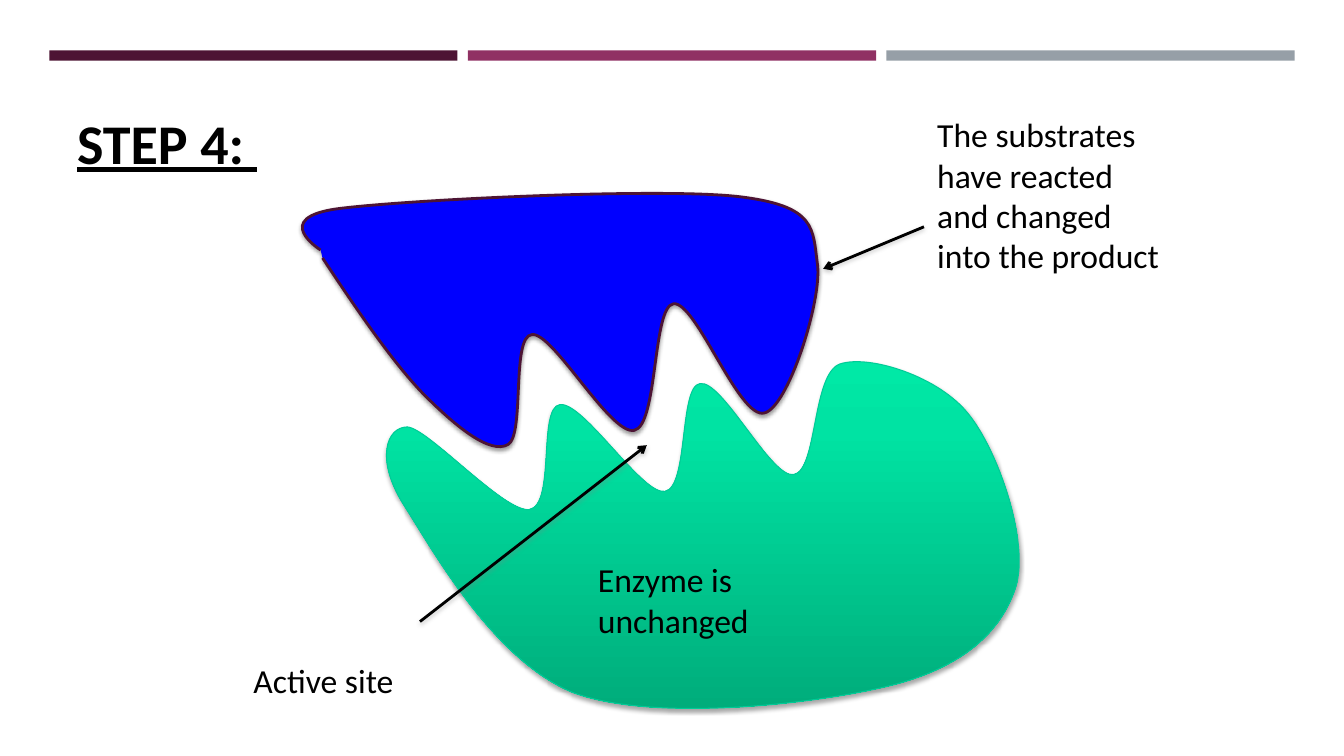
from copy import deepcopy

from lxml.etree import SubElement
from pptx import Presentation
from pptx.dml.color import RGBColor
from pptx.enum.shapes import MSO_CONNECTOR, MSO_SHAPE
from pptx.enum.text import MSO_ANCHOR
from pptx.oxml import parse_xml
from pptx.oxml.ns import nsdecls, qn
from pptx.util import Pt

FONT = "Calibri"

ENZYME_FRAME = (276, 258, 451.4, 247.7)
ENZYME_START = (291, 305)
ENZYME_CURVES = [
    ((276, 305), (268, 328), (288, 360)),
    ((308, 391), (352, 472), (410, 495)),
    ((468, 516), (582, 503), (635, 490)),
    ((688, 477), (716, 451), (726, 418)),
    ((735, 386), (713, 322), (692, 296)),
    ((671, 269), (621, 253), (600, 260)),
    ((580, 267), (584, 336), (567, 339)),
    ((551, 342), (516, 271), (500, 274)),
    ((485, 276), (492, 348), (475, 351)),
    ((459, 354), (417, 287), (400, 289)),
    ((384, 291), (397, 361), (378, 364)),
    ((360, 366), (306, 306), (291, 305)),
]
PRODUCT_FRAME = (216, 138.2, 367.9, 180.7)
PRODUCT_START = (230.4, 184.3)
PRODUCT_CURVES = [
    ((255.6, 222.5), (281.5, 260), (303, 282)),
    ((325, 304), (350, 325), (363, 317.5)),
    ((375, 310), (365, 240), (380, 239)),
    ((395, 237), (436, 311), (453, 307.4)),
    ((470, 304), (466, 219), (481, 217)),
    ((497, 214.6), (528, 300), (546, 295)),
    ((563, 291), (587, 215), (584, 189.4)),
    ((580.3, 163.4), (584, 147), (527, 140.4)),
    ((470, 134), (292.3, 142.6), (242, 149)),
    ((192.2, 155.5), (229, 178.6), (229, 178.6)),
]


def color(value):
    return RGBColor.from_string(value)


def add_shadow(shape, shade, opacity, distance):
    shape._element.spPr.append(parse_xml(
        f'<a:effectLst {nsdecls("a")}>'
        f'<a:outerShdw blurRad="{Pt(3.1)}" dist="{Pt(distance)}" dir="5400000" rotWithShape="0">'
        f'<a:srgbClr val="{shade}"><a:alpha val="{opacity * 1000}"/></a:srgbClr>'
        '</a:outerShdw></a:effectLst>'
    ))


def add_bar(page, left, fill):
    bar = page.shapes.add_shape(MSO_SHAPE.RECTANGLE, Pt(left), Pt(36), Pt(291.6), Pt(7.4))
    bar.shadow.inherit = False
    bar.fill.solid()
    bar.fill.fore_color.rgb = color(fill)
    bar.line.fill.background()


def add_text(page, text, left, top, width, height, size=24, heading=False):
    box = page.shapes.add_textbox(Pt(left), Pt(top), Pt(width), Pt(height))
    frame = box.text_frame
    frame.word_wrap = True
    frame.vertical_anchor = MSO_ANCHOR.BOTTOM if heading else MSO_ANCHOR.TOP
    span = frame.paragraphs[0].add_run()
    span.text = text
    span.font.name = FONT
    span.font.size = Pt(size)
    span.font.color.rgb = color("000000")
    if heading:
        span.font.bold = True
        span.font.underline = True


def add_segment(outline, tag, points, left, top):
    segment = SubElement(outline, qn(tag))
    for x, y in points:
        SubElement(segment, qn("a:pt"), x=str(Pt(x - left)), y=str(Pt(y - top)))


def add_blob(page, frame, start, curves, closed, line, line_width):
    left, top, width, height = frame
    builder = page.shapes.build_freeform(Pt(start[0]), Pt(start[1]))
    builder.add_line_segments([tuple(map(Pt, curve[-1])) for curve in curves], close=closed)
    blob = builder.convert_to_shape()
    blob.left, blob.top, blob.width, blob.height = map(Pt, frame)

    outline = blob._element.spPr.find(".//" + qn("a:path"))
    for segment in list(outline):
        outline.remove(segment)
    outline.set("w", str(Pt(width)))
    outline.set("h", str(Pt(height)))
    add_segment(outline, "a:moveTo", [start], left, top)
    for curve in curves:
        add_segment(outline, "a:cubicBezTo", curve, left, top)
    if closed:
        SubElement(outline, qn("a:close"))

    blob.line.color.rgb = color(line)
    blob.line.width = Pt(line_width)
    return blob


def fill_gradient(shape, stops):
    shape.fill.gradient()
    shape.fill.gradient_angle = 270
    stop_list = shape._element.spPr.find(".//" + qn("a:gsLst"))
    while len(stop_list) < len(stops):
        stop_list.append(deepcopy(stop_list[-1]))
    for stop, (position, value) in zip(shape.fill.gradient_stops, stops):
        stop.position = position
        stop.color.rgb = color(value)


def add_arrow(page, start, end):
    arrow = page.shapes.add_connector(MSO_CONNECTOR.STRAIGHT, *map(Pt, start + end))
    arrow.line.color.rgb = color("000000")
    arrow.line.width = Pt(2)
    stroke = arrow._element.spPr.find(qn("a:ln"))
    stroke.append(parse_xml(f'<a:tailEnd {nsdecls("a")} type="arrow"/>'))
    add_shadow(arrow, "808080", 38, 1.6)


def main():
    deck = Presentation()
    deck.slide_width, deck.slide_height = Pt(960), Pt(540)
    page = deck.slides.add_slide(deck.slide_layouts[6])

    for index, fill in enumerate(("4D1434", "903163", "969FA7")):
        add_bar(page, 35.2 + index * 299, fill)
    add_text(page, "STEP 4: ", 48, 62.6, 612, 66.2, size=40, heading=True)

    enzyme = add_blob(page, ENZYME_FRAME, ENZYME_START, ENZYME_CURVES, True, "00CC98", 0.75)
    fill_gradient(enzyme, ((0, "00E9A6"), (0.2, "00E3A3"), (1, "00AD7B")))
    add_shadow(enzyme, "000000", 35, 1.8)

    add_arrow(page, (660, 162), (588, 192))
    add_arrow(page, (300, 444), (462, 318))
    add_text(page, "Active site", 174, 468, 210, 36.7)
    add_text(page, "The substrates have reacted and changed into the product", 662.4, 78, 180, 124)
    add_text(page, "Enzyme is unchanged", 420, 396, 210, 65.5)

    product = add_blob(page, PRODUCT_FRAME, PRODUCT_START, PRODUCT_CURVES, False, "4D1434", 2)
    product.fill.solid()
    product.fill.fore_color.rgb = color("0000FF")
    add_shadow(product, "000000", 38, 1.6)

    deck.save("out.pptx")


if __name__ == "__main__":
    main()
